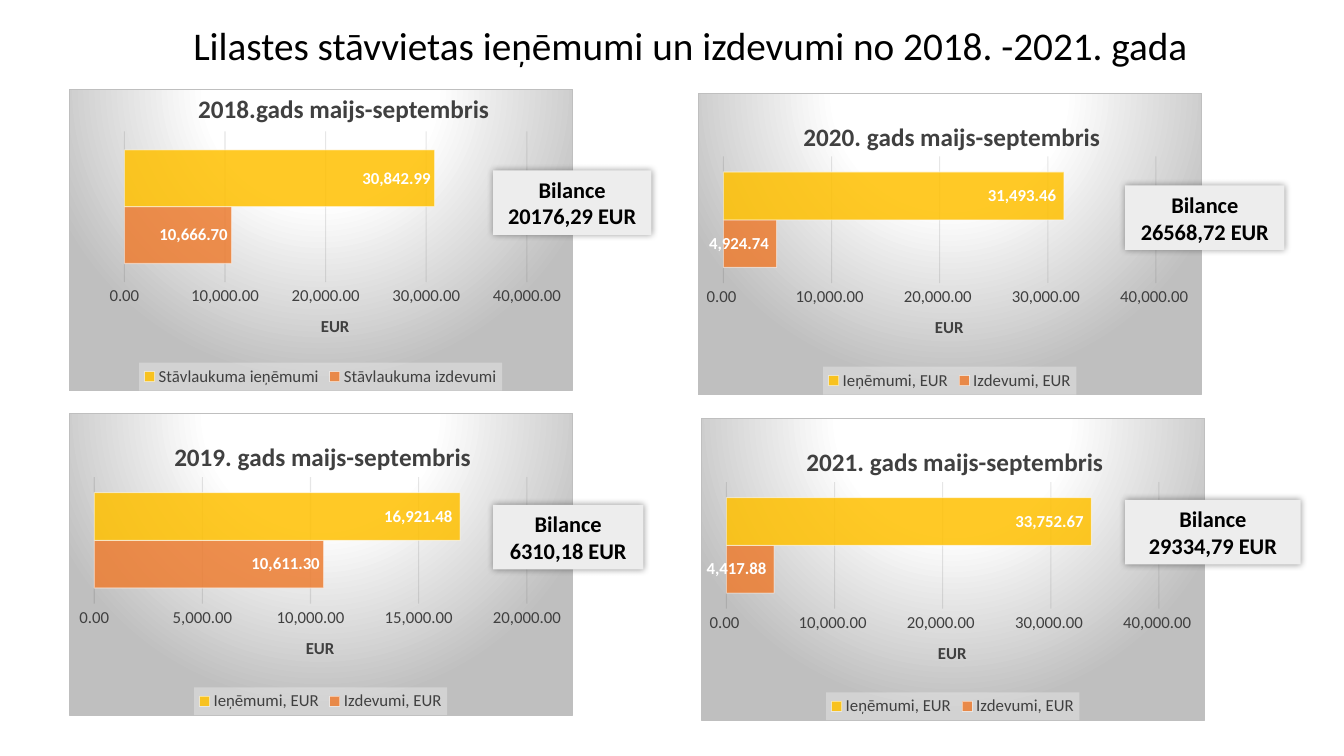
from lxml.etree import SubElement
from pptx import Presentation
from pptx.chart.data import CategoryChartData
from pptx.dml.color import RGBColor
from pptx.enum.chart import XL_CHART_TYPE, XL_LABEL_POSITION, XL_LEGEND_POSITION, XL_TICK_MARK
from pptx.enum.shapes import MSO_SHAPE
from pptx.enum.text import MSO_ANCHOR, PP_ALIGN
from pptx.oxml import parse_xml
from pptx.oxml.ns import nsdecls, qn
from pptx.util import Inches, Pt

HUES = {"ink": "000000", "grey": "404040", "edge": "BFBFBF", "card": "EDEDED", "grid": "0D0D0D",
        "pale": "F2F2F2", "white": "FFFFFF", "in": "FFC000", "out": "ED7D31"}
FONTS = {
    "head": {"size": Pt(28), "bold": False, "hue": "ink"},
    "title": {"size": Pt(18), "bold": True, "hue": "grey"},
    "card": {"size": Pt(16), "bold": True, "hue": "ink"},
    "axis": {"size": Pt(12), "bold": False, "hue": "grey"},
    "unit": {"size": Pt(12), "bold": True, "hue": "grey"},
    "label": {"size": Pt(12), "bold": True, "hue": "white"},
}
PLAIN = "#,##0.00"
RED = r"#,##0.00_);[Red]\(#,##0.00\)"


class Board:
    """Style and current slide."""

    def __init__(self, slide):
        self.slide = slide
        self.face = "Calibri"

    def hue(self, name):
        return RGBColor.from_string(HUES[name])

    def style(self, font, kind):
        font.name = self.face
        for key, val in FONTS[kind].items():
            if key == "hue":
                font.color.rgb = self.hue(val)
            else:
                setattr(font, key, val)

    def label(self, shape, text, kind):
        frame = shape.text_frame
        frame.word_wrap = True
        frame.vertical_anchor = MSO_ANCHOR.MIDDLE
        frame.text = text
        for para in frame.paragraphs:
            para.alignment = PP_ALIGN.CENTER
            self.style(para.runs[0].font, kind)

    def text(self, box, text, kind):
        self.label(self.slide.shapes.add_textbox(*map(Inches, box)), text, kind)

    def card(self, box, text):
        shape = self.slide.shapes.add_shape(MSO_SHAPE.RECTANGLE, *map(Inches, box))
        shape.fill.solid()
        shape.fill.fore_color.rgb = self.hue("card")
        shape.line.fill.background()
        shape.shadow.inherit = False
        glow = SubElement(shape.element.spPr.find(qn("a:effectLst")), qn("a:outerShdw"),
                          blurRad=str(Pt(5)), algn="ctr", rotWithShape="0")
        tint = SubElement(glow, qn("a:srgbClr"), val=HUES["ink"])
        SubElement(tint, qn("a:alpha"), val="40000")
        self.label(shape, text, "card")

    def place(self, node, spot, inner=False):
        """Fix a chart part at fractions of the chart size."""
        for old in node.findall(qn("c:layout")):
            node.remove(old)
        layout = parse_xml(f"<c:layout {nsdecls('c')}><c:manualLayout/></c:layout>")
        pairs = [("layoutTarget", "inner")] if inner else []
        pairs += [("xMode", "edge"), ("yMode", "edge"), *zip("xywh", spot)]
        for tag, val in pairs:
            SubElement(layout[0], qn("c:" + tag), val=str(val))
        node.insert(0 if inner else 1, layout)

    def fade(self, root, route, share):
        for tint in root.xpath(route):
            SubElement(tint, qn("a:alpha"), val=str(share * 1000))

    def back(self, root):
        """Radial grey ground, thin border and pale legend."""
        stops = "".join(f'<a:gs pos="{pos}000"><a:srgbClr val="{HUES[name]}"/></a:gs>'
                        for pos, name in ((0, "white"), (39, "white"), (100, "edge")))
        ground = parse_xml(
            f"<c:spPr {nsdecls('c', 'a')}><a:gradFill><a:gsLst>{stops}</a:gsLst>"
            '<a:path path="circle"><a:fillToRect l="50000" t="-80000" r="50000" b="180000"/></a:path>'
            f'</a:gradFill><a:ln w="{Pt(0.75)}"><a:solidFill><a:srgbClr val="{HUES["edge"]}"/>'
            "</a:solidFill></a:ln></c:spPr>")
        root.find(qn("c:chart")).addnext(ground)
        panel = parse_xml(f"<c:spPr {nsdecls('c', 'a')}><a:solidFill>"
                          f'<a:srgbClr val="{HUES["pale"]}"><a:alpha val="39000"/></a:srgbClr>'
                          "</a:solidFill></c:spPr>")
        root.xpath(".//c:legend/c:overlay")[0].addnext(panel)

    def chart(self, left, top, title, rows, form, area):
        data = CategoryChartData()
        data.categories = ["1"]
        for name, val, *_ in rows:
            data.add_series(name, [val])
        chart = self.slide.shapes.add_chart(XL_CHART_TYPE.BAR_CLUSTERED, Inches(left), Inches(top),
                                            Inches(5), Inches(3), data).chart
        root = chart.element
        chart.font.name, chart.font.size = self.face, Pt(10)

        # Title
        chart.has_title = bool(title)
        if title:
            chart.chart_title.text_frame.text = title
            self.style(chart.chart_title.text_frame.paragraphs[0].runs[0].font, "title")
            self.place(root.xpath("./c:chart/c:title")[0], (0.2, 0.07))

        # Legend
        chart.has_legend = True
        chart.legend.position = XL_LEGEND_POSITION.BOTTOM
        chart.legend.include_in_layout = False
        self.style(chart.legend.font, "axis")

        # Axes
        chart.category_axis.visible = False
        axis = chart.value_axis
        axis.major_tick_mark = axis.minor_tick_mark = XL_TICK_MARK.NONE
        axis.format.line.fill.background()
        axis.tick_labels.number_format = form
        axis.tick_labels.number_format_is_linked = False
        self.style(axis.tick_labels.font, "axis")
        grid = axis.major_gridlines.format.line
        grid.width, grid.color.rgb = Pt(0.75), self.hue("grid")
        axis.axis_title.text_frame.text = "EUR"
        self.style(axis.axis_title.text_frame.paragraphs[0].runs[0].font, "unit")

        # Bars and labels
        plot = chart.plots[0]
        plot.gap_width, plot.vary_by_categories = 65, False
        for bar, (_, _, tint, mask) in zip(plot.series, rows):
            bar.format.fill.solid()
            bar.format.fill.fore_color.rgb = self.hue(tint)
            bar.format.line.width = Pt(0.75)
            bar.format.line.color.rgb = self.hue("white")
            self.style(bar.data_labels.font, "label")
            marks = {"show_value": True, "position": XL_LABEL_POSITION.INSIDE_END,
                     "number_format": mask, "number_format_is_linked": False}
            for key, val in marks.items():
                setattr(bar.data_labels, key, val)

        # Ground, layout and transparency
        self.place(root.xpath(".//c:plotArea")[0], area, True)
        self.fade(root, ".//c:ser/c:spPr/a:solidFill/a:srgbClr", 85)
        self.fade(root, ".//c:ser/c:spPr/a:ln//a:srgbClr", 50)
        self.fade(root, ".//c:majorGridlines//a:srgbClr", 10)
        self.back(root)


def main():
    deck = Presentation()
    deck.slide_width, deck.slide_height = Inches(13.33), Inches(7.5)
    board = Board(deck.slides.add_slide(deck.slide_layouts[6]))
    board.text((0.8, -0.03, 12.09, 0.96),
               "Lilastes stāvvietas ieņēmumi un izdevumi no 2018. -2021. gada", "head")

    # Charts: left, top, title, costs, income, number formats, plot area
    cost, gain = "Izdevumi, EUR", "Ieņēmumi, EUR"
    wide = (0.05, 0.21, 0.86, 0.42)
    years = [
        (0.68, 0.88, "", ("Stāvlaukuma izdevumi", 10666.7), ("Stāvlaukuma ieņēmumi", 30842.99),
         (PLAIN, PLAIN, PLAIN), (0.11, 0.14, 0.8, 0.5)),
        (0.68, 4.1, "2019. gads maijs-septembris", (cost, 10611.3), (gain, 16921.48),
         (PLAIN, PLAIN, RED), wide),
        (6.92, 0.92, "2020. gads maijs-septembris", (cost, 4924.74), (gain, 31493.46),
         (RED, RED, RED), wide),
        (6.95, 4.15, "2021. gads maijs-septembris", (cost, 4417.88), (gain, 33752.67),
         (RED, RED, RED), wide),
    ]
    for left, top, title, low, high, (form, first, last), area in years:
        rows = [(*low, "out", first), (*high, "in", last)]
        board.chart(left, top, title, rows, form, area)
    board.text((0.08, 0.88, 6.66, 0.4), "2018.gads maijs-septembris", "title")

    # Balance cards
    cards = [(4.89, 1.69, 1.57, "Bilance 20176,29 EUR"), (4.89, 5.01, 1.49, "Bilance\n6310,18 EUR"),
             (11.16, 1.84, 1.58, "Bilance 26568,72 EUR"), (11.16, 4.96, 1.74, "Bilance 29334,79 EUR")]
    for left, top, width, text in cards:
        board.card((left, top, width, 0.64), text)
    deck.save("out.pptx")


if __name__ == "__main__":
    main()
